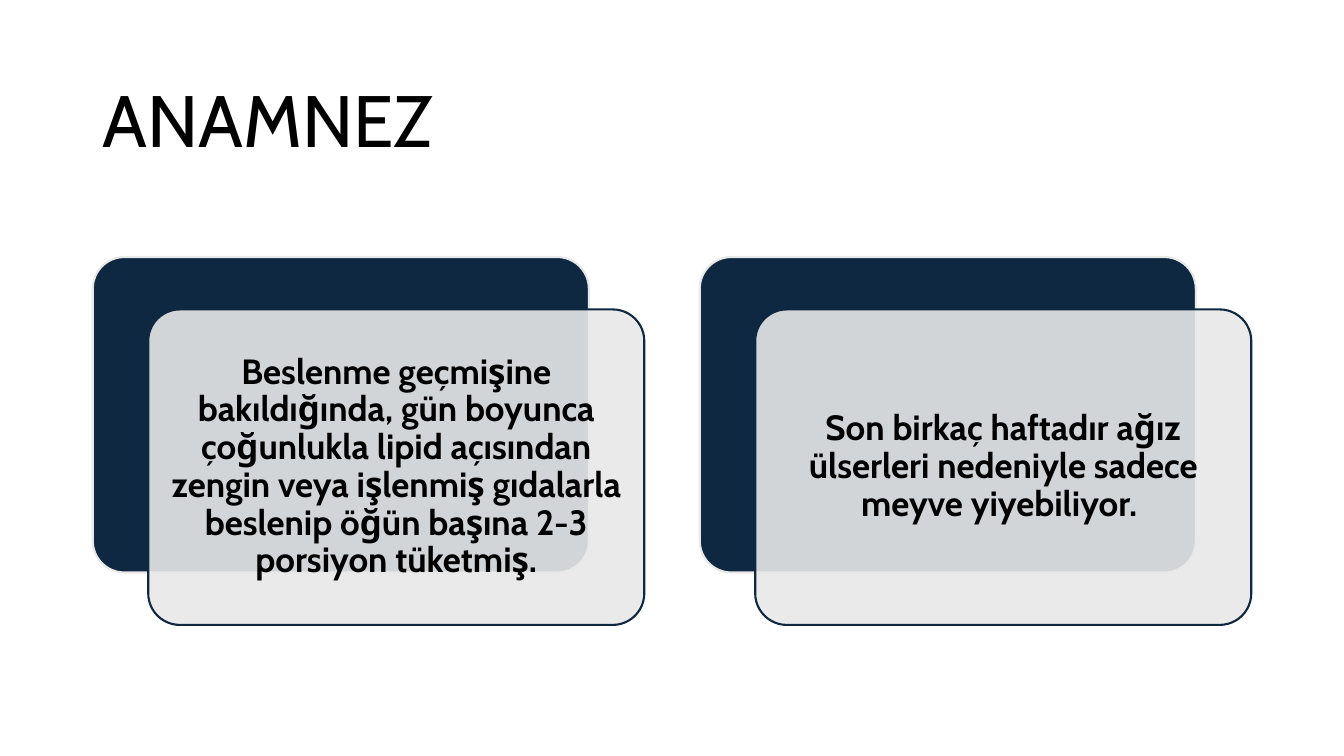
from pptx import Presentation
from pptx.dml.color import RGBColor
from pptx.enum.shapes import MSO_SHAPE
from pptx.enum.text import MSO_ANCHOR, PP_ALIGN
from pptx.util import Inches, Pt
from lxml.etree import SubElement

COLORS = {"navy": "0E2841", "gray": "E8E8E8", "black": "000000"}
CARDS = [
    "Beslenme geçmişine bakıldığında, gün boyunca çoğunlukla lipid açısından "
    "zengin\u00a0veya işlenmiş gıdalarla beslenip öğün başına 2-3 porsiyon tüketmiş.",
    "Son birkaç haftadır ağız ülserleri nedeniyle sadece meyve yiyebiliyor. ",
]

deck = Presentation()
deck.slide_width, deck.slide_height = Inches(13.33), Inches(7.5)
slide = deck.slides.add_slide(deck.slide_layouts[6])

# Card grid, in inches
left, top = 0.92, 2.55
width, height = 4.92, 3.13
step = 6.02
shift_x, shift_y = 0.55, 0.52
inset = 0.1


def add_card(x, y, fill, line):
    card = slide.shapes.add_shape(
        MSO_SHAPE.ROUNDED_RECTANGLE,
        Inches(x), Inches(y), Inches(width), Inches(height))
    card.adjustments[0] = 0.1
    card.shadow.inherit = False
    card.fill.solid()
    card.fill.fore_color.rgb = RGBColor.from_string(COLORS[fill])
    card.line.color.rgb = RGBColor.from_string(COLORS[line])
    card.line.width = Pt(1.5)
    return card


def set_text(frame, text, size, bold, align):
    frame.text = text
    frame.word_wrap = True
    frame.vertical_anchor = MSO_ANCHOR.MIDDLE
    para = frame.paragraphs[0]
    para.alignment = align
    para.line_spacing = 0.9
    font = para.runs[0].font
    font.name, font.size, font.bold = "Cabin", Pt(size), bold
    font.color.rgb = RGBColor.from_string(COLORS["black"])


title = slide.shapes.add_textbox(
    Inches(left), Inches(0.61), Inches(11.5), Inches(1.24))
set_text(title.text_frame, "ANAMNEZ", 52, False, PP_ALIGN.LEFT)

for col, text in enumerate(CARDS):
    x = left + col * step
    add_card(x, top, "navy", "gray")
    front = add_card(x + shift_x, top + shift_y, "gray", "navy")
    tint = front.fill._xPr.solidFill[0]
    SubElement(tint, tint.tag.replace("srgbClr", "alpha"), val="90000")
    frame = front.text_frame
    frame.margin_left = frame.margin_right = Inches(inset)
    frame.margin_top = frame.margin_bottom = Inches(inset)
    set_text(frame, text, 25, True, PP_ALIGN.CENTER)

deck.save("out.pptx")
